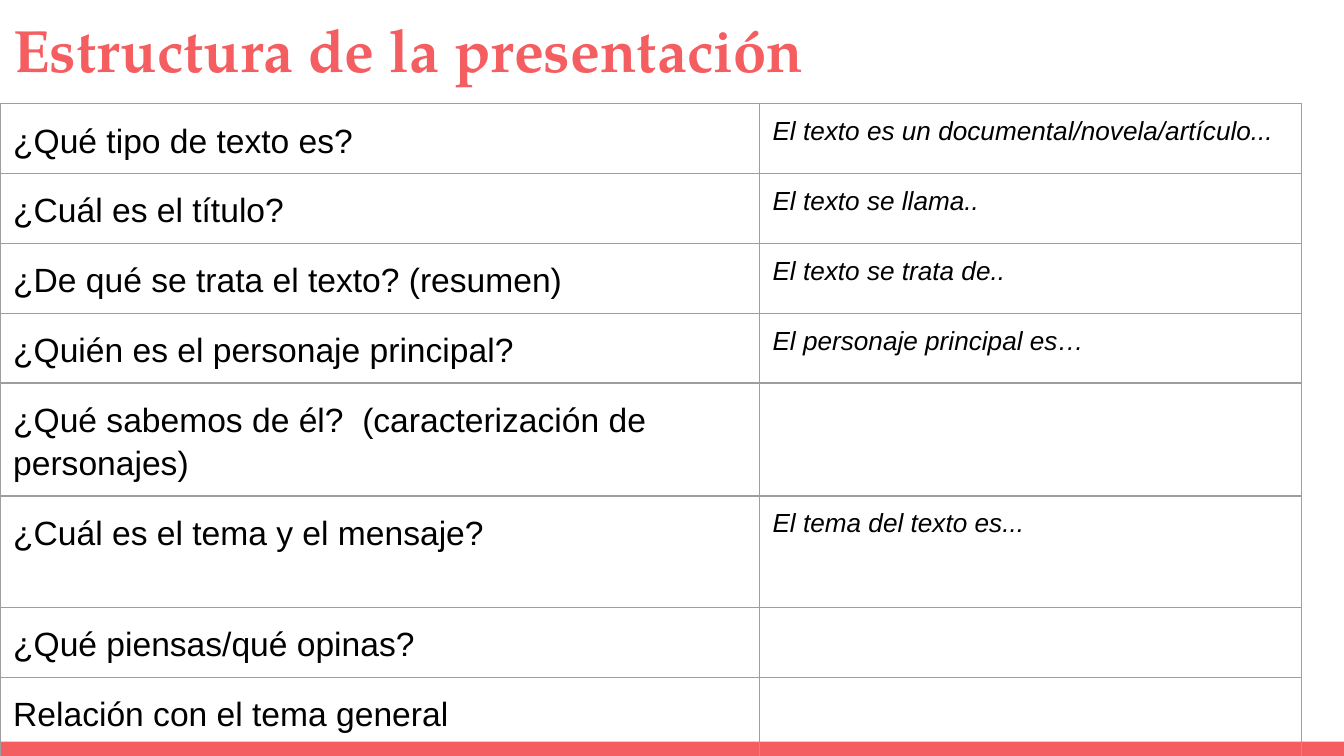
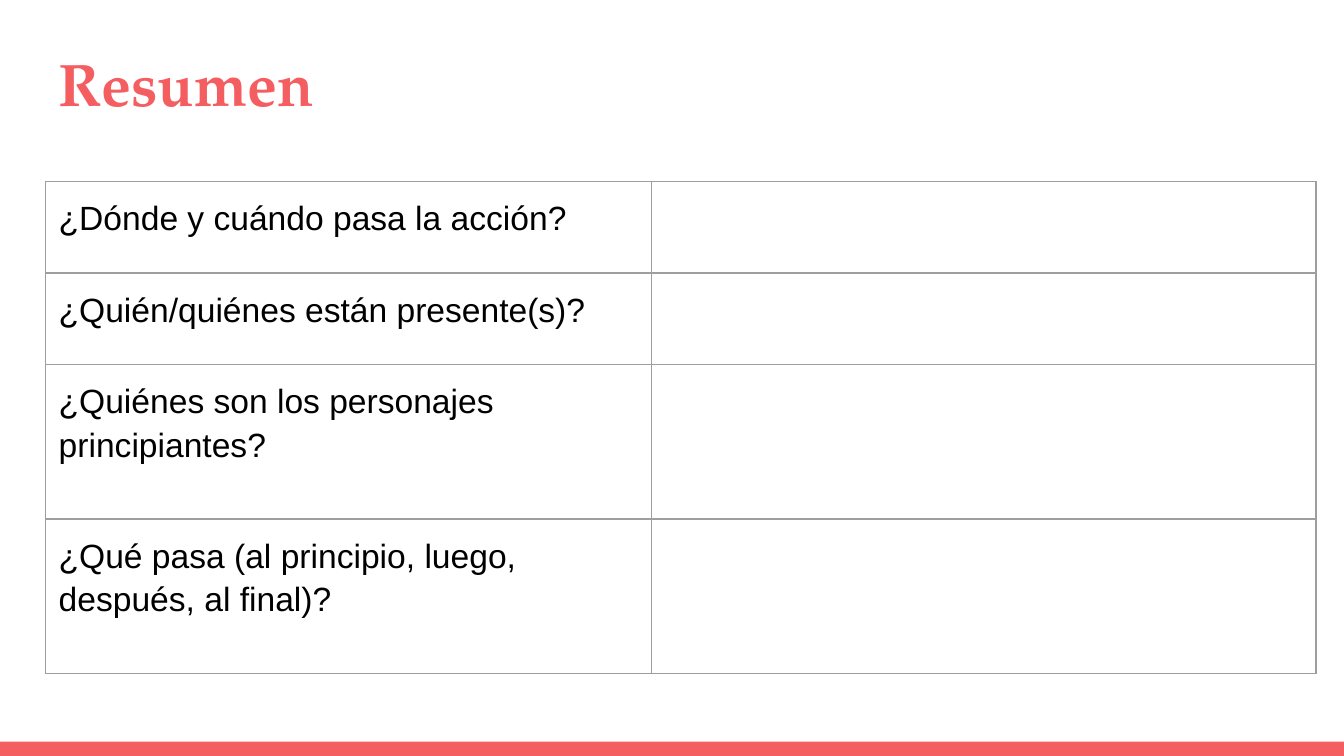
from lxml import etree
from pptx import Presentation
from pptx.dml.color import RGBColor
from pptx.enum.shapes import MSO_SHAPE
from pptx.enum.text import MSO_ANCHOR, MSO_AUTO_SIZE, PP_ALIGN
from pptx.oxml.ns import qn
from pptx.util import Cm, Pt

CORAL, BLACK, GREY = "F55E61", "000000", "9E9E9E"
TITLE_FONT, BODY_FONT = "TeX Gyre Pagella", "Arial"
WIDTH, HEIGHT, BAND_HEIGHT = 25.4, 14.29, 0.27
INSET = Cm(0.25)


def add_styled_run(paragraph, text, font_name, size, color, bold=False, italic=False):
    run = paragraph.add_run()
    run.text = text
    font = run.font
    font.name, font.size, font.bold, font.italic = font_name, Pt(size), bold, italic
    font.color.rgb = RGBColor.from_string(color)


def add_borders(cell, color):
    properties = cell._tc.get_or_add_tcPr()
    for side in ("lnL", "lnR", "lnT", "lnB"):
        line = etree.SubElement(properties, qn(f"a:{side}"), w=str(Pt(0.75)))
        fill = etree.SubElement(line, qn("a:solidFill"))
        etree.SubElement(fill, qn("a:srgbClr"), val=color)


# Content: title, its place, table place, column widths, rows of (height, question, answer)
slides = [
    ("Estructura de la presentación", (0, 0), (0, 1.96), (14.35, 10.24), [
        (1.32, "¿Qué tipo de texto es?", "El texto es un documental/novela/artículo..."),
        (1.32, "¿Cuál es el título?", "El texto se llama.."),
        (1.32, "¿De qué se trata el texto? (resumen)", "El texto se trata de.."),
        (1.32, "¿Quién es el personaje principal?", "El personaje principal es…"),
        (2.11, "¿Qué sabemos de él?  (caracterización de personajes)", ""),
        (2.11, "¿Cuál es el tema y el mensaje?", "El tema del texto es..."),
        (1.32, "¿Qué piensas/qué opinas?", ""),
        (2.11, "Relación con el tema general", ""),
    ]),
    ("Resumen", (0.86, 0.64), (0.86, 3.43), (11.46, 12.55), [
        (1.73, "¿Dónde y cuándo pasa la acción?", ""),
        (1.73, "¿Quién/quiénes están presente(s)?", ""),
        (2.92, "¿Quiénes son los personajes principiantes?", ""),
        (2.92, "¿Qué pasa (al principio, luego, después, al final)?", ""),
    ]),
]

prs = Presentation()
prs.slide_width, prs.slide_height = Cm(WIDTH), Cm(HEIGHT)

for heading, heading_place, grid_place, column_widths, rows in slides:
    slide = prs.slides.add_slide(prs.slide_layouts[5])

    # Title
    title = slide.shapes.title
    title.left, title.top = (Cm(v) for v in heading_place)
    title.width, title.height = Cm(23.67), Cm(1.96)
    frame = title.text_frame
    frame.word_wrap = True
    frame.auto_size = MSO_AUTO_SIZE.NONE
    frame.vertical_anchor = MSO_ANCHOR.TOP
    frame.margin_left = frame.margin_right = INSET
    frame.margin_top = frame.margin_bottom = INSET
    frame.paragraphs[0].alignment = PP_ALIGN.LEFT
    add_styled_run(frame.paragraphs[0], heading, TITLE_FONT, 32, CORAL, bold=True)

    # Bottom band, behind the table
    band = slide.shapes.add_shape(MSO_SHAPE.RECTANGLE, 0, Cm(HEIGHT - BAND_HEIGHT),
                                  Cm(WIDTH), Cm(BAND_HEIGHT))
    band.shadow.inherit = False
    band.fill.solid()
    band.fill.fore_color.rgb = RGBColor.from_string(CORAL)
    band.line.fill.background()

    # Table of questions and answer openings
    left, top = grid_place
    grid = slide.shapes.add_table(len(rows), 2, Cm(left), Cm(top), Cm(sum(column_widths)),
                                  Cm(sum(row[0] for row in rows))).table
    grid.first_row = grid.horz_banding = False
    for column, width in zip(grid.columns, column_widths):
        column.width = Cm(width)
    for row, (height, question, answer) in zip(grid.rows, rows):
        row.height = Cm(height)
        for cell in row.cells:
            add_borders(cell, GREY)
            cell.fill.background()
            cell.margin_left = cell.margin_right = INSET
            cell.margin_top = cell.margin_bottom = INSET
        question_line, answer_line = (cell.text_frame.paragraphs[0] for cell in row.cells)
        question_line.line_spacing = 1.15
        add_styled_run(question_line, question, BODY_FONT, 18, BLACK)
        if answer:
            add_styled_run(answer_line, answer, BODY_FONT, 14, BLACK, italic=True)

prs.save("out.pptx")
